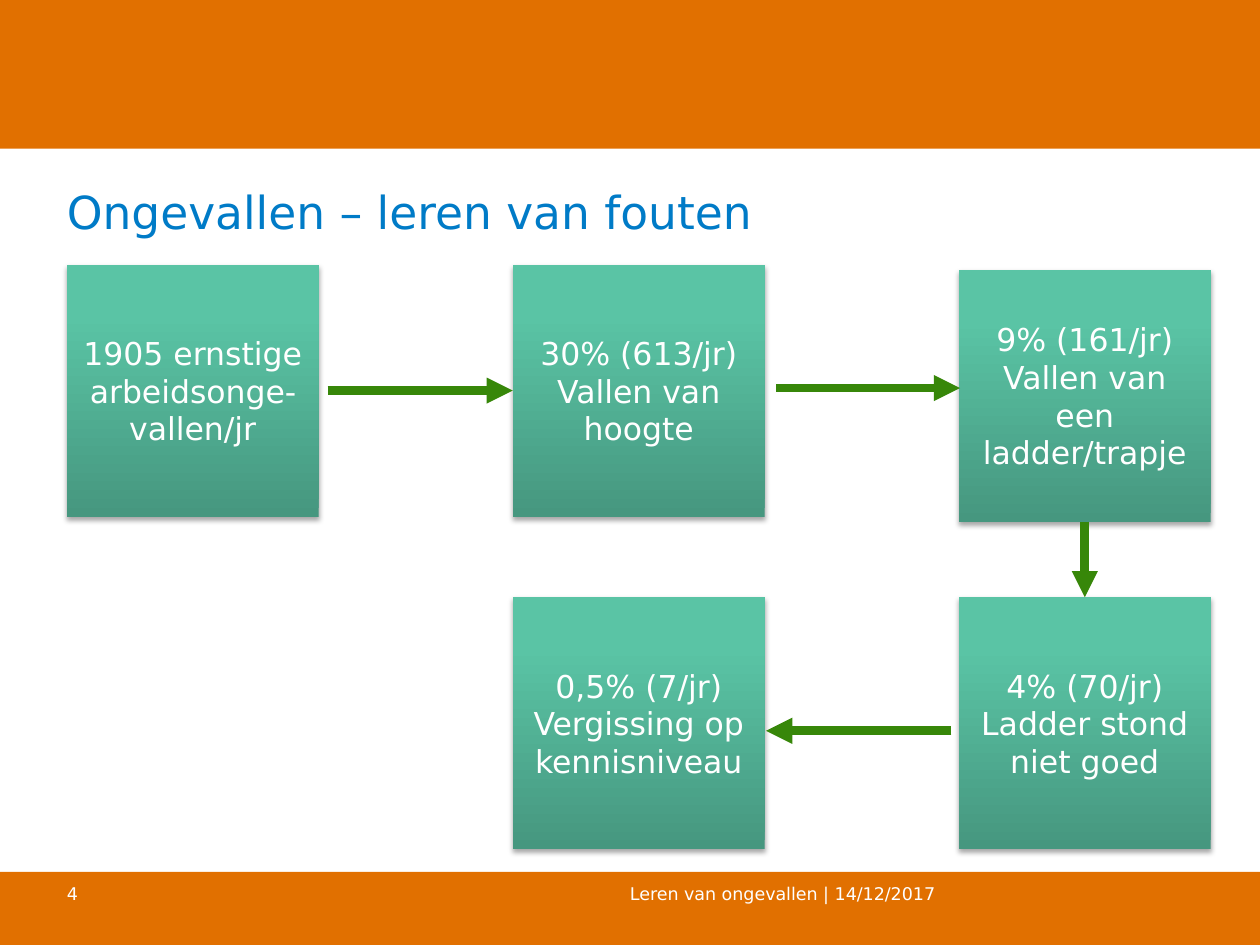
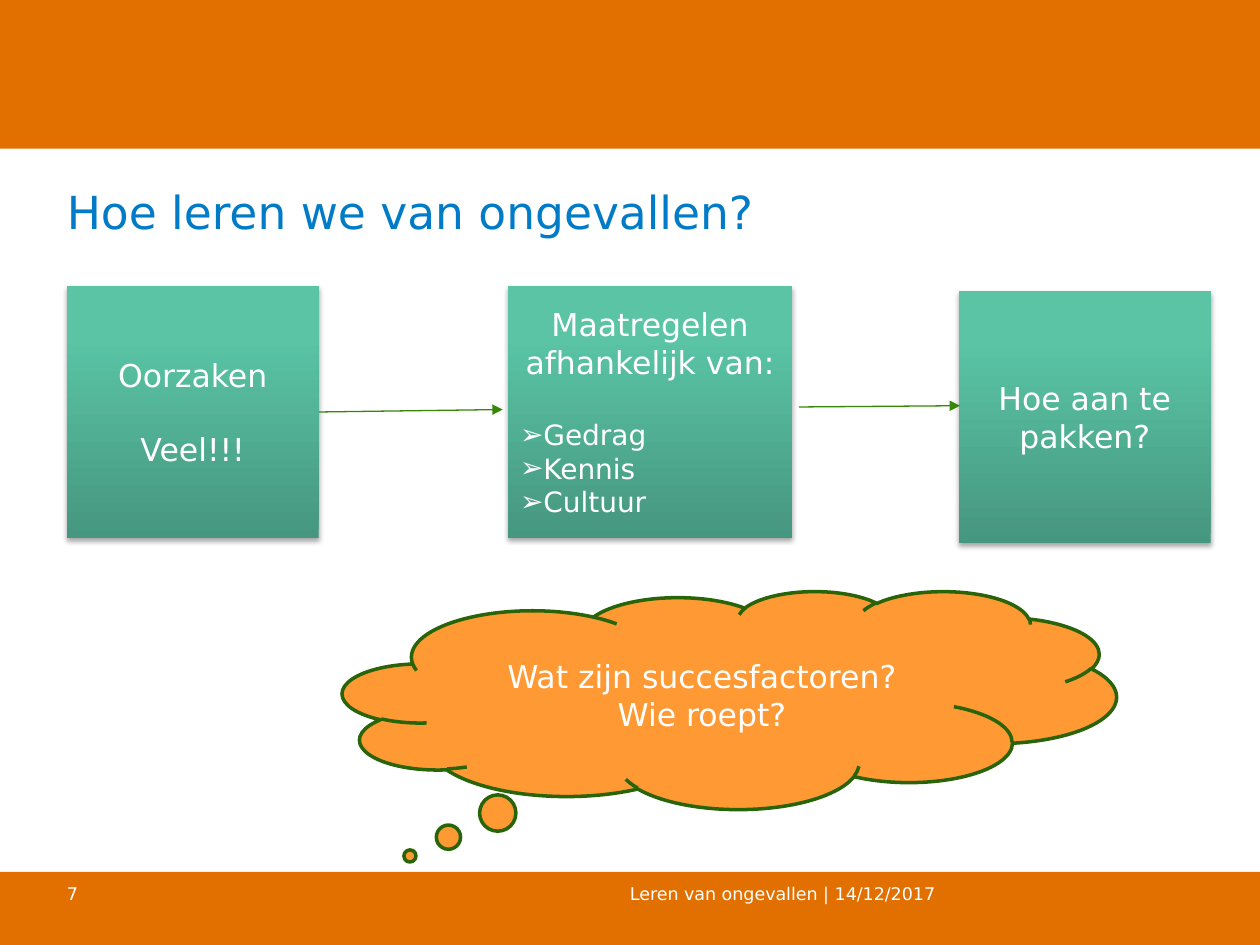
import dataclasses

import lxml.etree
import pptx
import pptx.dml.color
import pptx.enum.dml
import pptx.enum.shapes
import pptx.enum.text
import pptx.oxml.ns
import pptx.util

Inches = pptx.util.Inches
Align = pptx.enum.text.PP_ALIGN
Anchor = pptx.enum.text.MSO_ANCHOR
Shape = pptx.enum.shapes.MSO_SHAPE
TOP, LEFT, BOTTOM, RIGHT = range(4)


@dataclasses.dataclass(frozen=True)
class Theme:
    """Colours, font and type sizes shared by the slides."""
    font: str = "DejaVu Sans"
    band: str = "E17000"
    title: str = "007BC7"
    text: str = "FFFFFF"
    arrow: str = "378709"
    cloud: str = "FF9933"
    cloud_line: str = "2A6409"
    box_stops: tuple = ((0, "46977F"), (80, "5AC4A5"), (100, "59C7A6"))
    title_size: int = 26
    box_size: int = 18
    bullet_size: int = 16
    footer_size: int = 10
    gap: int = 21


THEME = Theme()
MARGIN = 0.53
BOX_SIDE = 2
COLUMNS = (0.53, 4.07, 7.61)


def rgb(value):
    """Return a colour object for a hex string."""
    return pptx.dml.color.RGBColor.from_string(value)


def add_element(parent, tag, **attributes):
    """Append a DrawingML element with the given attributes."""
    element = lxml.etree.SubElement(parent, pptx.oxml.ns.qn(tag))
    for name, value in attributes.items():
        element.set(name, str(value))
    return element


def write_run(paragraph, text, size, color=THEME.text):
    """Add one formatted run to a paragraph."""
    run = paragraph.add_run()
    run.text = text
    run.font.name = THEME.font
    run.font.size = pptx.util.Pt(size)
    run.font.color.rgb = rgb(color)


def remove_insets(frame):
    """Set all four text margins to zero."""
    frame.margin_left = frame.margin_top = 0
    frame.margin_right = frame.margin_bottom = 0


def next_paragraph(frame):
    """Return the empty first paragraph, or a new one."""
    first = frame.paragraphs[0]
    return frame.add_paragraph() if first.runs else first


def write_centred(shape, lines, gap=0):
    """Write centred lines in the middle of a shape, with a gap between them."""
    frame = shape.text_frame
    frame.word_wrap = True
    frame.vertical_anchor = Anchor.MIDDLE
    for index, line in enumerate(lines):
        paragraph = next_paragraph(frame)
        paragraph.alignment = Align.CENTER
        if index and gap:
            paragraph.space_before = pptx.util.Pt(gap)
        write_run(paragraph, line, THEME.box_size)


def write_bullets(shape, items):
    """Add arrow-bulleted items below the lines of a shape."""
    for index, item in enumerate(items):
        paragraph = next_paragraph(shape.text_frame)
        paragraph.alignment = Align.LEFT
        if index == 0:
            paragraph.space_before = pptx.util.Pt(THEME.gap)
        properties = paragraph._p.get_or_add_pPr()
        properties.set("marL", str(Inches(0.1)))
        properties.set("indent", str(-Inches(0.1)))
        add_element(properties, "a:buFont", typeface=THEME.font)
        add_element(properties, "a:buChar", char="➢")
        write_run(paragraph, item, THEME.bullet_size)


def add_band(slide, top, height):
    """Draw a full-width coloured band."""
    band = slide.shapes.add_shape(
        Shape.RECTANGLE, 0, Inches(top), Inches(10), Inches(height))
    band.shadow.inherit = False
    band.fill.solid()
    band.fill.fore_color.rgb = rgb(THEME.band)
    band.line.fill.background()


def add_footer_text(slide, left, width, text):
    """Write small text in the bottom band."""
    box = slide.shapes.add_textbox(
        Inches(left), Inches(7.01), Inches(width), Inches(0.16))
    frame = box.text_frame
    frame.word_wrap = True
    remove_insets(frame)
    write_run(frame.paragraphs[0], text, THEME.footer_size)


def add_base_slide(presentation, title, number):
    """Create a slide with bands, title, footer and number."""
    slide = presentation.slides.add_slide(presentation.slide_layouts[5])
    add_band(slide, 6.92, 0.58)
    add_band(slide, 0, 1.18)
    placeholder = slide.shapes.title
    placeholder.left, placeholder.top = Inches(MARGIN), Inches(1.4)
    placeholder.width, placeholder.height = Inches(8.94), Inches(0.49)
    frame = placeholder.text_frame
    frame.auto_size = pptx.enum.text.MSO_AUTO_SIZE.NONE
    frame.word_wrap = False
    frame.vertical_anchor = Anchor.BOTTOM
    remove_insets(frame)
    frame.paragraphs[0].alignment = Align.LEFT
    write_run(frame.paragraphs[0], title, THEME.title_size, THEME.title)
    add_footer_text(slide, 5, 4.47, "Leren van ongevallen | 14/12/2017")
    add_footer_text(slide, MARGIN, 0.39, number)
    return slide


def add_flow_box(slide, left, top, lines, width=BOX_SIDE, gap=0):
    """Draw a green gradient box with a soft shadow and centred lines."""
    box = slide.shapes.add_shape(
        Shape.RECTANGLE, Inches(left), Inches(top), Inches(width), Inches(BOX_SIDE))
    box.fill.gradient()
    box.fill.gradient_angle = 90
    stops = box._element.spPr.find(".//" + pptx.oxml.ns.qn("a:gsLst"))
    for stop in list(stops):
        stops.remove(stop)
    for position, color in THEME.box_stops:
        stop = add_element(stops, "a:gs", pos=position * 1000)
        add_element(stop, "a:srgbClr", val=color)
    box.line.fill.background()
    box.shadow.inherit = False
    effects = box._element.spPr.find(pptx.oxml.ns.qn("a:effectLst"))
    shadow = add_element(
        effects, "a:outerShdw", blurRad=pptx.util.Pt(3.1), dist=pptx.util.Pt(1.8),
        dir=90 * 60000, rotWithShape=0)
    color = add_element(shadow, "a:srgbClr", val="000000")
    add_element(color, "a:alpha", val=35000)
    write_centred(box, lines, gap)
    return box


def add_arrow(slide, start, end, weight, begin=None, finish=None):
    """Draw an arrow from start to end, joined to (shape, side) pairs if given."""
    arrow = slide.shapes.add_connector(
        pptx.enum.shapes.MSO_CONNECTOR.STRAIGHT,
        *(Inches(value) for value in (*start, *end)))
    if begin:
        arrow.begin_connect(*begin)
    if finish:
        arrow.end_connect(*finish)
    arrow.line.color.rgb = rgb(THEME.arrow)
    arrow.line.width = pptx.util.Pt(weight)
    add_element(arrow.line._get_or_add_ln(), "a:tailEnd", type="triangle")
    add_element(arrow._element.spPr, "a:effectLst")


def add_thought_cloud(slide, left, top, width, height, lines):
    """Draw a thought cloud with centred lines."""
    cloud = slide.shapes.add_shape(
        Shape.CLOUD_CALLOUT, Inches(left), Inches(top), Inches(width), Inches(height))
    cloud.adjustments[0], cloud.adjustments[1] = -0.413, 0.716
    cloud.shadow.inherit = False
    cloud.fill.solid()
    cloud.fill.fore_color.rgb = rgb(THEME.cloud)
    cloud.line.color.rgb = rgb(THEME.cloud_line)
    cloud.line.width = pptx.util.Pt(2)
    write_centred(cloud, lines)


def build_accident_slide(presentation):
    """Build the flow that narrows down the accident figures."""
    slide = add_base_slide(presentation, "Ongevallen – leren van fouten", "4")
    first, second, third = COLUMNS
    upper, lower, weight = 2.1, 4.74, 5
    add_flow_box(slide, first, upper, ["1905 ernstige arbeidsonge-vallen/jr"])
    height_falls = add_flow_box(
        slide, second, upper, ["30% (613/jr)", "Vallen van hoogte"])
    ladder_falls = add_flow_box(
        slide, third, 2.14, ["9% (161/jr)", "Vallen van een ladder/trapje"])
    ladder_placing = add_flow_box(
        slide, third, lower, ["4% (70/jr)", "Ladder stond niet goed"])
    add_flow_box(
        slide, second, lower, ["0,5% (7/jr)", "Vergissing op kennisniveau"])
    middle = upper + BOX_SIDE / 2
    add_arrow(slide, (2.6, middle), (second, middle), weight,
              finish=(height_falls, LEFT))
    add_arrow(slide, (6.16, 3.08), (7.62, 3.08), weight)
    add_arrow(slide, (8.61, 4.14), (8.61, lower), weight,
              begin=(ladder_falls, BOTTOM), finish=(ladder_placing, TOP))
    add_arrow(slide, (7.55, 5.8), (6.08, 5.8), weight)


def build_learning_slide(presentation):
    """Build the flow from causes to approach, with the question cloud."""
    slide = add_base_slide(presentation, "Hoe leren we van ongevallen?", "7")
    top, weight = 2.27, 0.75
    causes = add_flow_box(
        slide, COLUMNS[0], top, ["Oorzaken", "Veel!!!"], gap=THEME.gap)
    measures = add_flow_box(
        slide, 4.03, top, ["Maatregelen afhankelijk van:"], width=2.26)
    write_bullets(measures, ["Gedrag", "Kennis", "Cultuur"])
    add_flow_box(slide, COLUMNS[2], 2.31, ["Hoe aan te pakken?"])
    add_arrow(slide, (2.53, 3.27), (3.99, 3.25), weight, begin=(causes, RIGHT))
    add_arrow(slide, (6.34, 3.23), (7.62, 3.22), weight)
    add_thought_cloud(slide, 2.72, 4.69, 6.14, 1.73,
                      ["Wat zijn succesfactoren?", "Wie roept?"])


def main():
    """Build and save the presentation."""
    presentation = pptx.Presentation()
    presentation.slide_width = Inches(10)
    presentation.slide_height = Inches(7.5)
    build_accident_slide(presentation)
    build_learning_slide(presentation)
    presentation.save("out.pptx")


if __name__ == "__main__":
    main()
